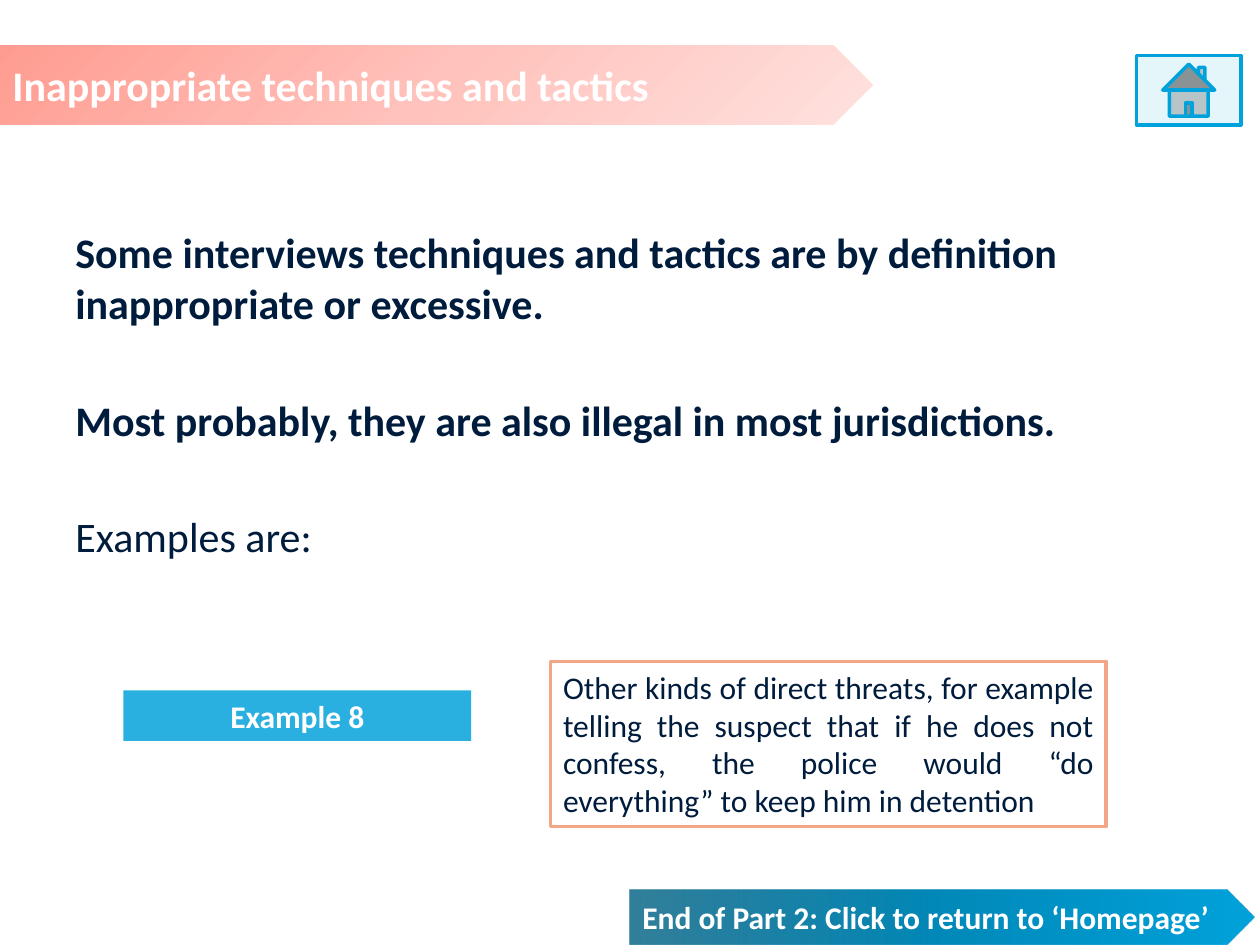
from lxml import etree
from pptx import Presentation
from pptx.dml.color import RGBColor
from pptx.enum.shapes import MSO_SHAPE
from pptx.enum.text import MSO_ANCHOR, PP_ALIGN
from pptx.oxml import parse_xml
from pptx.oxml.ns import nsdecls, qn
from pptx.util import Inches, Pt

NAVY = RGBColor(0x00, 0x1C, 0x3D)
WHITE = RGBColor(0xFF, 0xFF, 0xFF)
BLUE = RGBColor(0x00, 0xA2, 0xDB)
MID_BLUE = RGBColor(0x00, 0x89, 0xB9)
DEEP_BLUE = RGBColor(0x00, 0x60, 0x82)
PALE_BLUE = RGBColor(0xE5, 0xF6, 0xFB)
SALMON = RGBColor(0xFF, 0x9C, 0x91)
LIGHT_SALMON = RGBColor(0xFF, 0xC2, 0xBC)
PALE_SALMON = RGBColor(0xFF, 0xE1, 0xDE)
PEACH = RGBColor(0xF3, 0xA6, 0x87)

CIRCLE = '<a:path path="circle"><a:fillToRect r="100000" b="100000"/></a:path>'
LINEAR = '<a:lin ang="0" scaled="0"/>'


def set_alpha(color, percent):
    etree.SubElement(color, qn("a:alpha")).set("val", str(percent * 1000))


def set_gradient(sp, colors, shade, first_alpha=100):
    """Fill with three evenly spaced stops."""
    stops = "".join(
        f'<a:gs pos="{i * 50000}"><a:srgbClr val="{c}"/></a:gs>'
        for i, c in enumerate(colors))
    grad = parse_xml(f'<a:gradFill {nsdecls("a")} rotWithShape="1">'
                     f'<a:gsLst>{stops}</a:gsLst>{shade}</a:gradFill>')
    if first_alpha < 100:
        set_alpha(grad.find(".//" + qn("a:srgbClr")), first_alpha)
    solid = sp._element.spPr.find(qn("a:solidFill"))
    solid.getparent().replace(solid, grad)


def add_box(s, kind, box, fill, line=None):
    sp = s.shapes.add_shape(kind, *map(Inches, box))
    sp.shadow.inherit = False
    sp.fill.solid()
    sp.fill.fore_color.rgb = fill
    if line is None:
        sp.line.fill.background()
    else:
        sp.line.color.rgb = line
        sp.line.width = Pt(2)
    return sp


def write(sp, paragraphs, size, color, align=PP_ALIGN.LEFT,
          anchor=MSO_ANCHOR.TOP, gap=0):
    """Write (text, bold) paragraphs with a gap between them."""
    tf = sp.text_frame
    tf.word_wrap = True
    tf.vertical_anchor = anchor
    for i, (text, bold) in enumerate(paragraphs):
        p = tf.add_paragraph() if i else tf.paragraphs[0]
        p.text = text
        p.alignment = align
        p.space_before = Pt(gap if i else 0)
        p.font.name = "Calibri"
        p.font.size = Pt(size)
        p.font.bold = bold
        p.font.color.rgb = color


def add_banner(s, box, text, size, colors, shade, first_alpha=100):
    sp = add_box(s, MSO_SHAPE.PENTAGON, box, colors[0])
    set_gradient(sp, colors, shade, first_alpha)
    write(sp, [(text, True)], size, WHITE, anchor=MSO_ANCHOR.MIDDLE)


def add_body(s, box):
    sp = s.shapes.add_textbox(*map(Inches, box))
    write(sp, [
        ("Some interviews techniques and tactics are by definition "
         "inappropriate or excessive.", True),
        ("Most probably, they are also illegal in most jurisdictions.", True),
        ("Examples are:", False),
    ], 24, NAVY, gap=38)


def add_example(s, box, label, text):
    left, top, width, height = box
    # Label, slightly above the middle of the description
    sp = add_box(s, MSO_SHAPE.RECTANGLE, (left, top + 0.23, 2.76, 0.4), BLUE)
    set_alpha(sp._element.spPr.find(".//" + qn("a:srgbClr")), 84)
    write(sp, [(label, True)], 18, WHITE, PP_ALIGN.CENTER)
    # Description
    sp = add_box(s, MSO_SHAPE.RECTANGLE,
                 (left + 3.39, top, width - 3.39, height), WHITE, PEACH)
    write(sp, [(text, False)], 18, NAVY, PP_ALIGN.JUSTIFY)


def main():
    prs = Presentation()
    prs.slide_width, prs.slide_height = Inches(10), Inches(7.5)
    s = prs.slides.add_slide(prs.slide_layouts[6])

    add_body(s, (0.5, 1.75, 9, 3.42))
    # Title and home button
    add_banner(s, (0, 0.36, 6.93, 0.63), "Inappropriate techniques and tactics",
               24, (SALMON, LIGHT_SALMON, PALE_SALMON), CIRCLE)
    add_box(s, MSO_SHAPE.ACTION_BUTTON_HOME, (9.02, 0.44, 0.83, 0.55),
            PALE_BLUE, BLUE)
    add_example(s, (0.98, 5.25, 7.8, 1.31), "Example 8",
                "Other kinds of direct threats, for example telling the suspect "
                "that if he does not confess, the police would “do everything” "
                "to keep him in detention")
    # Closing banner
    add_banner(s, (5, 7.06, 4.96, 0.44),
               "End of Part 2: Click to return to ‘Homepage’",
               18, (DEEP_BLUE, MID_BLUE, BLUE), LINEAR, first_alpha=80)

    prs.save("out.pptx")


if __name__ == "__main__":
    main()
